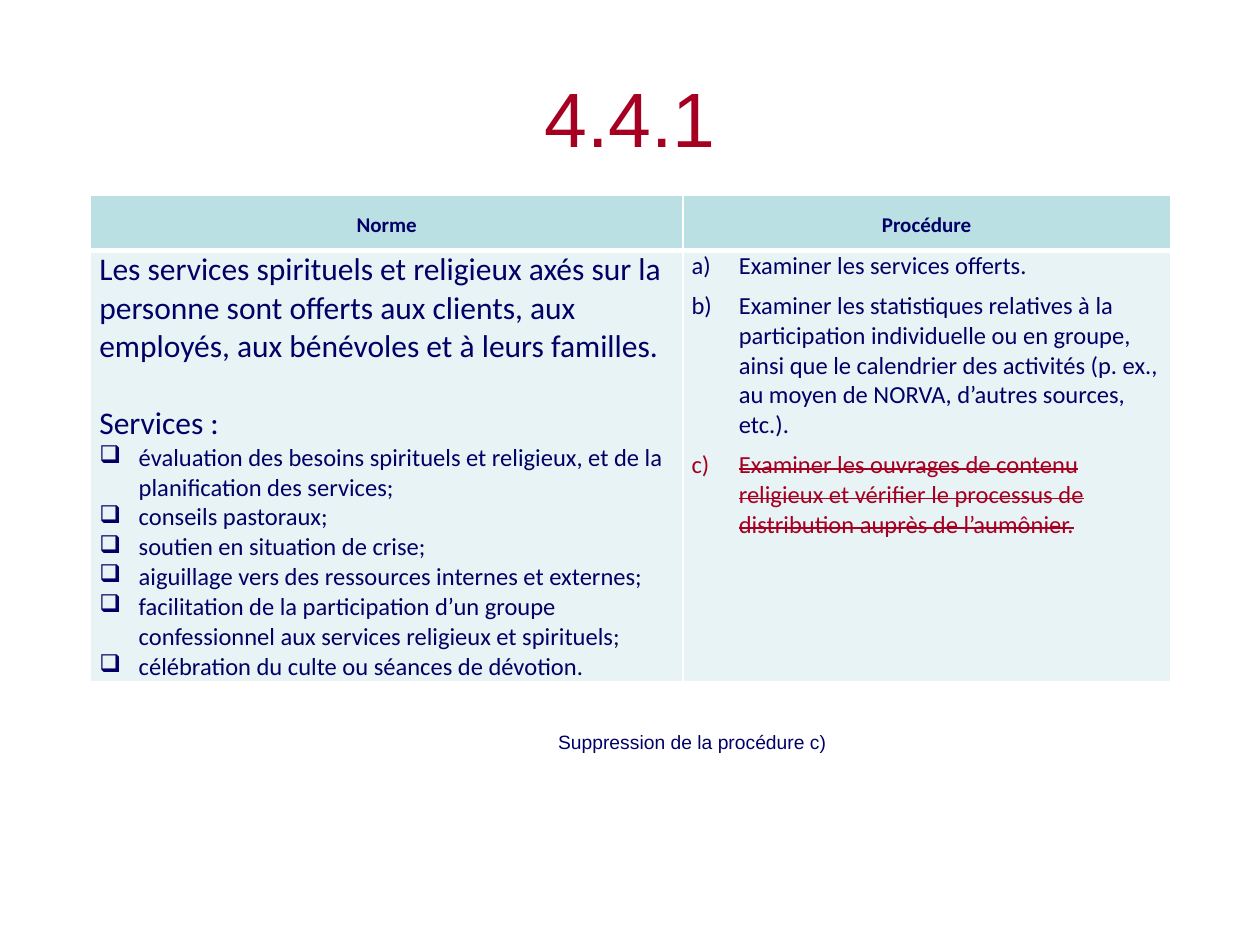
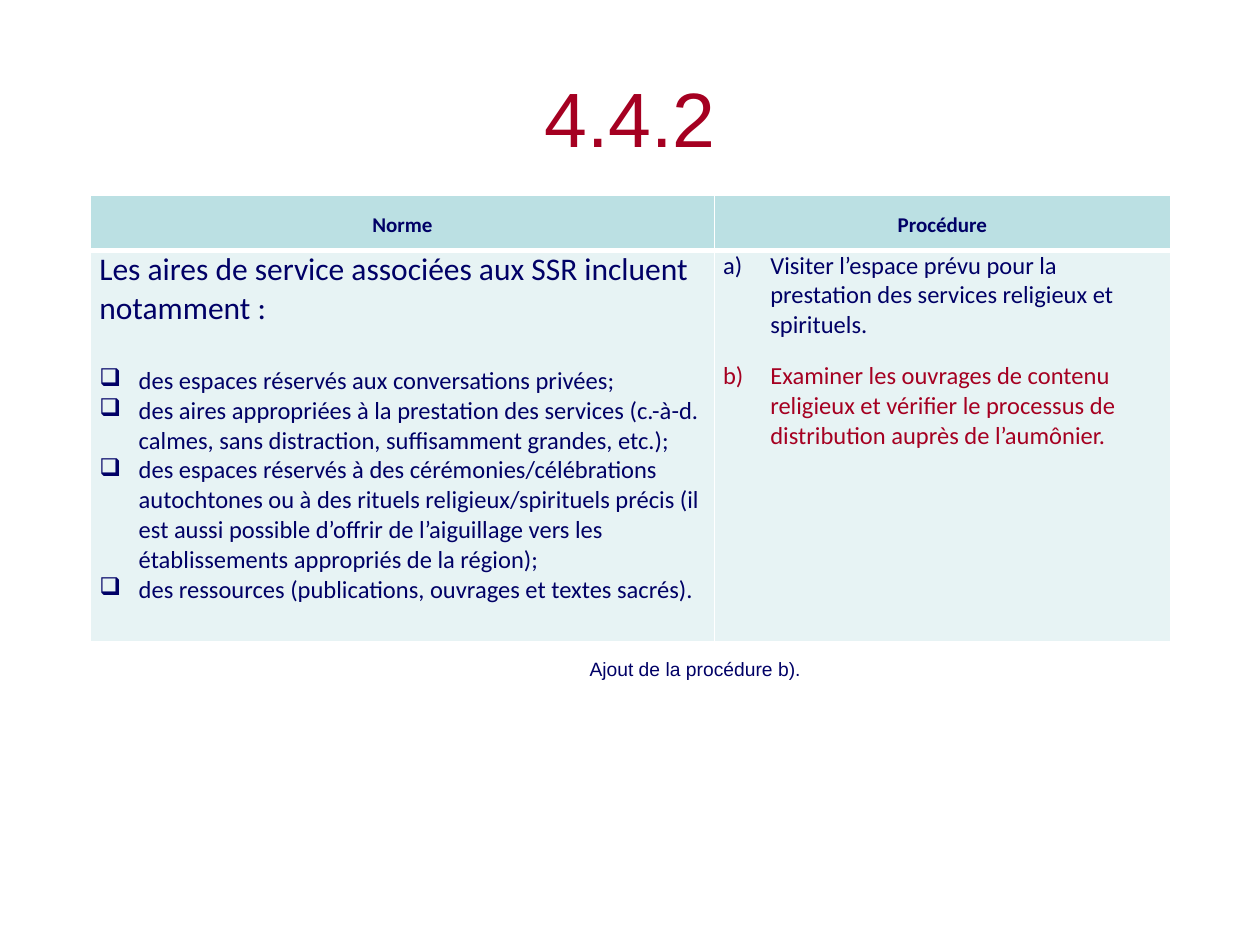
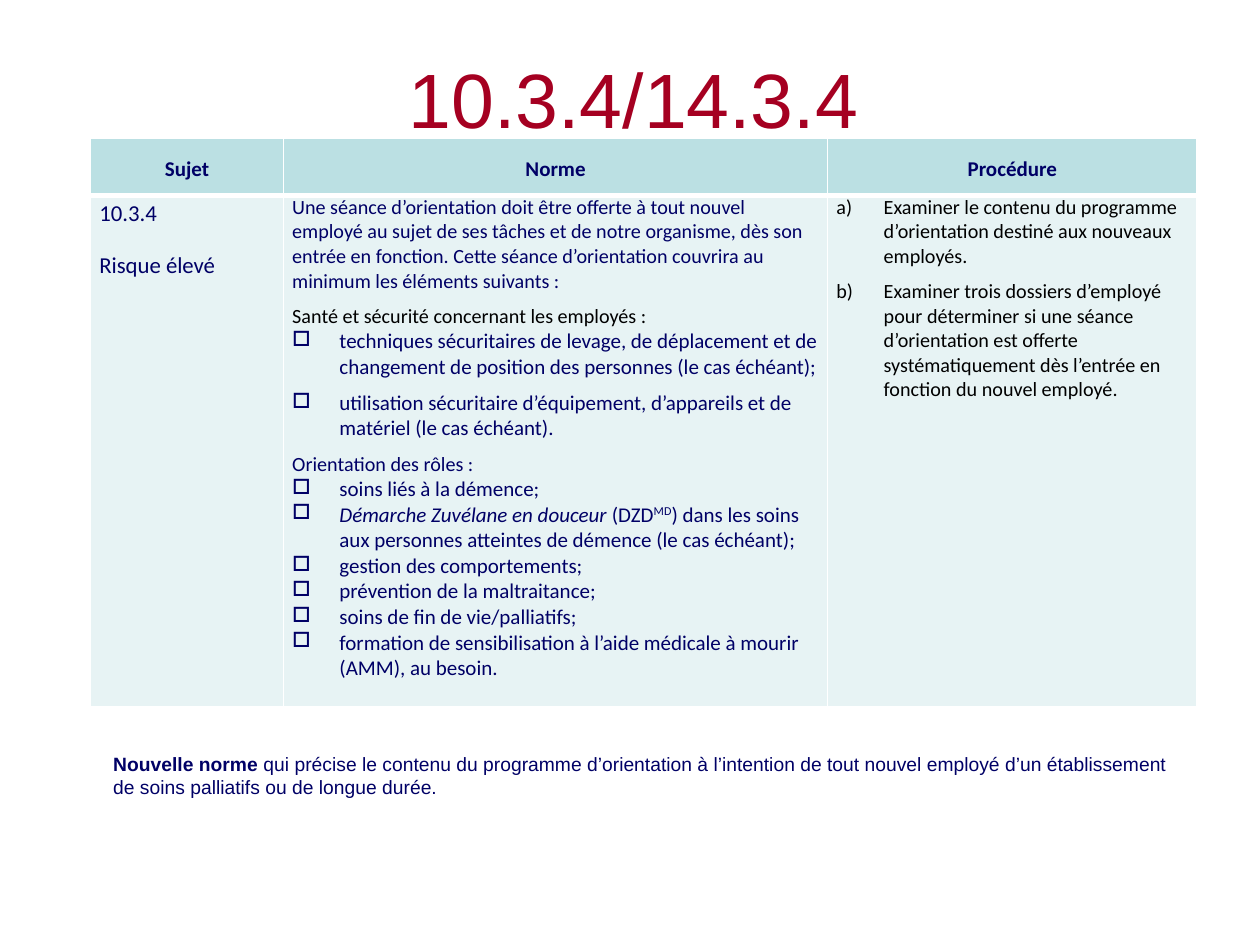
from dataclasses import dataclass

from lxml import etree
from pptx import Presentation
from pptx.dml.color import RGBColor
from pptx.enum.text import MSO_ANCHOR, PP_ALIGN
from pptx.oxml.ns import qn
from pptx.util import Pt

CENTER = PP_ALIGN.CENTER
MIDDLE = MSO_ANCHOR.MIDDLE
TITLE_ONLY = 5

COLORS = {
    "navy": "000066",
    "red": "A50021",
    "black": "000000",
    "white": "FFFFFF",
    "header": "BBE0E3",
    "body": "E7F3F4",
}
HEADING_FONT = "Arial"
TABLE_FONT = "Calibri"
TABLE_LEFT = 51.8
CELL_INSET = 5
BLANK_LINE = 22  # height of one 18 pt line
LETTERED = "a)"


@dataclass
class Para:
    """One paragraph: content is a string or a list of (text, style) parts."""
    content: object
    size: float = 14
    color: str = "navy"
    before: float = 0
    after: float = 0
    line: float = 1.0
    marker: str = ""
    indent: float = 0
    align: object = None
    bold: bool = False
    strike: bool = False
    font: str = TABLE_FONT


# Paragraph kinds
def header(text):
    return Para(text, size=12, bold=True, align=CENTER, line=1.15, after=12)


def check_items(texts, before_first=0):
    return [Para(text, marker="❑", indent=22.5, before=0 if i else before_first)
            for i, text in enumerate(texts)]


def box_item(content, after=0):
    return Para(content, size=12, marker="□", indent=27, after=after)


def step(text, **style):
    return Para(text, marker=LETTERED, indent=27, **style)


def caption(content):
    return Para(content, size=11, font=HEADING_FONT)


# Text formatting
def rgb(name):
    return RGBColor.from_string(COLORS[name])


def add_marker(paragraph, marker, indent):
    properties = paragraph._p.get_or_add_pPr()
    properties.set("marL", str(Pt(indent)))
    properties.set("indent", str(-Pt(indent)))
    if marker == LETTERED:
        bullet = etree.SubElement(properties, qn("a:buAutoNum"))
        bullet.set("type", "alphaLcParenR")
    else:
        bullet = etree.SubElement(properties, qn("a:buChar"))
        bullet.set("char", marker)


def write_paragraph(paragraph, para):
    if para.marker:
        add_marker(paragraph, para.marker, para.indent)
    if para.align is not None:
        paragraph.alignment = para.align
    paragraph.line_spacing = para.line
    paragraph.space_before = Pt(para.before)
    paragraph.space_after = Pt(para.after)

    parts = [(para.content, "")] if isinstance(para.content, str) else para.content
    for text, style in parts:
        run = paragraph.add_run()
        run.text = text
        run.font.name = para.font
        run.font.size = Pt(para.size)
        run.font.color.rgb = rgb(para.color)
        run.font.bold = para.bold or style == "bold"
        run.font.italic = style == "italic"
        if style == "superscript":
            run.font._element.set("baseline", "30000")
        if para.strike:
            run.font._element.set("strike", "sngStrike")


def write_paragraphs(frame, paras):
    for i, para in enumerate(paras):
        paragraph = frame.add_paragraph() if i else frame.paragraphs[0]
        write_paragraph(paragraph, para)


# Slide elements
def add_title(slide, text, left, top, width, height):
    title = slide.shapes.title
    title.left, title.top = Pt(left), Pt(top)
    title.width, title.height = Pt(width), Pt(height)
    frame = title.text_frame
    frame.vertical_anchor = MIDDLE
    write_paragraphs(frame, [Para(text, size=44, color="red", align=CENTER,
                                  font=HEADING_FONT)])


def add_caption(slide, content, left, top, width):
    box = slide.shapes.add_textbox(Pt(left), Pt(top), Pt(width), Pt(48))
    box.text_frame.word_wrap = True
    write_paragraphs(box.text_frame, [caption(content)])


def set_borders(cell, top, bottom):
    properties = cell._tc.get_or_add_tcPr()
    widths = {"a:lnL": 1, "a:lnR": 1, "a:lnT": top, "a:lnB": bottom}
    for position, (tag, width) in enumerate(widths.items()):
        line = etree.Element(qn(tag), w=str(Pt(width)))
        fill = etree.SubElement(line, qn("a:solidFill"))
        etree.SubElement(fill, qn("a:srgbClr"), val=COLORS["white"])
        properties.insert(position, line)


def fill_cell(cell, paras, is_header):
    cell.margin_left = cell.margin_right = Pt(CELL_INSET)
    cell.margin_top = cell.margin_bottom = 0
    if is_header:
        cell.vertical_anchor = MIDDLE
    cell.fill.solid()
    cell.fill.fore_color.rgb = rgb("header" if is_header else "body")
    set_borders(cell, *((1, 3) if is_header else (3, 1)))
    write_paragraphs(cell.text_frame, paras)


def add_standard_table(slide, top, widths, heights, columns):
    """columns maps each heading to the paragraphs below it."""
    table = slide.shapes.add_table(
        2, len(columns), Pt(TABLE_LEFT), Pt(top),
        Pt(sum(widths)), Pt(sum(heights))).table
    table.horz_banding = False
    for row, height in zip(table.rows, heights):
        row.height = Pt(height)
    for i, (heading, paras) in enumerate(columns.items()):
        table.columns[i].width = Pt(widths[i])
        fill_cell(table.cell(0, i), [header(heading)], True)
        fill_cell(table.cell(1, i), paras, False)


# Slides
def build_services(slide):
    add_title(slide, "4.4.1", 36, 21.6, 648, 90)
    norm = [
        Para("Les services spirituels et religieux axés sur la personne sont "
             "offerts aux clients, aux employés, aux bénévoles et à leurs familles.",
             size=18),
        Para("Services :", size=18, before=BLANK_LINE),
        *check_items([
            "évaluation des besoins spirituels et religieux, et de la "
            "planification des services;",
            "conseils pastoraux;",
            "soutien en situation de crise;",
            "aiguillage vers des ressources internes et externes;",
            "facilitation de la participation d’un groupe confessionnel aux "
            "services religieux et spirituels;",
            "célébration du culte ou séances de dévotion.",
        ]),
    ]
    procedure = [
        step("Examiner les services offerts.", after=6),
        step("Examiner les statistiques relatives à la participation individuelle "
             "ou en groupe, ainsi que le calendrier des activités (p. ex., au moyen "
             "de NORVA, d’autres sources, etc.).", after=6),
        step("Examiner les ouvrages de contenu religieux et vérifier le processus "
             "de distribution auprès de l’aumônier.",
             after=6, color="red", strike=True),
    ]
    add_standard_table(slide, 111.6, [338.4, 278.6], [31.7, 242.6],
                       {"Norme": norm, "Procédure": procedure})
    add_caption(slide, "Suppression de la procédure c)", 311.8, 414, 270)


def build_service_areas(slide):
    add_title(slide, "4.4.2", 36, 21.6, 648, 90)
    norm = [
        Para("Les aires de service associées aux SSR incluent notamment :", size=18),
        *check_items([
            "des espaces réservés aux conversations privées;",
            "des aires appropriées à la prestation des services (c.-à-d. calmes, "
            "sans distraction, suffisamment grandes, etc.);",
            "des espaces réservés à des cérémonies/célébrations autochtones ou à "
            "des rituels religieux/spirituels précis (il est aussi possible "
            "d’offrir de l’aiguillage vers les établissements appropriés de la "
            "région);",
            "des ressources (publications, ouvrages et textes sacrés).",
        ], before_first=BLANK_LINE),
    ]
    procedure = [
        step("Visiter l’espace prévu pour la prestation des services religieux et "
             "spirituels.", after=6),
        step("Examiner les ouvrages de contenu religieux et vérifier le processus "
             "de distribution auprès de l’aumônier.",
             before=6, after=6, color="red"),
    ]
    add_standard_table(slide, 111.6, [356.4, 260.6], [31.7, 223.7],
                       {"Norme": norm, "Procédure": procedure})
    add_caption(slide, "Ajout de la procédure b).", 329.8, 372.2, 222)


def build_orientation(slide):
    add_title(slide, "10.3.4/14.3.4", 38.2, 18, 648, 75.6)
    subject = [
        Para("10.3.4", size=13, line=1.15, after=6),
        Para("Risque élevé", size=13, line=1.15, before=6, after=6),
    ]
    norm = [
        Para("Une séance d’orientation doit être offerte à tout nouvel employé au "
             "sujet de ses tâches et de notre organisme, dès son entrée en "
             "fonction. Cette séance d’orientation couvrira au minimum les "
             "éléments suivants :", size=11.5, after=6),
        Para("Santé et sécurité concernant les employés :", size=11.5, color="black"),
        box_item("techniques sécuritaires de levage, de déplacement et de changement "
                 "de position des personnes (le cas échéant);", after=6),
        box_item("utilisation sécuritaire d’équipement, d’appareils et de matériel "
                 "(le cas échéant)."),
        Para("Orientation des rôles :", size=11.5, before=6),
        box_item("soins liés à la démence;"),
        box_item([
            ("Démarche Zuvélane en douceur", "italic"),
            (" (DZD", ""),
            ("MD", "superscript"),
            (") dans les soins aux personnes atteintes de démence (le cas échéant);",
             ""),
        ]),
        box_item("gestion des comportements;"),
        box_item("prévention de la maltraitance;"),
        box_item("soins de fin de vie/palliatifs;"),
        box_item("formation de sensibilisation à l’aide médicale à mourir (AMM), "
                 "au besoin."),
    ]
    procedure = [
        step("Examiner le contenu du programme d’orientation destiné aux nouveaux "
             "employés.", size=11.5, color="black"),
        step("Examiner trois dossiers d’employé pour déterminer si une séance "
             "d’orientation est offerte systématiquement dès l’entrée en fonction "
             "du nouvel employé.", size=11.5, color="black", before=6),
    ]
    add_standard_table(slide, 79.2, [110.2, 311, 211], [32.4, 292],
                       {"Sujet": subject, "Norme": norm, "Procédure": procedure})
    add_caption(slide, [
        ("Nouvelle norme", "bold"),
        (" qui précise le contenu du programme d’orientation à l’intention de tout "
         "nouvel employé d’un établissement de soins palliatifs ou de longue durée.",
         ""),
    ], 57.6, 426.2, 620.6)


def main():
    deck = Presentation()
    deck.slide_width, deck.slide_height = Pt(720), Pt(540)
    for build in (build_services, build_service_areas, build_orientation):
        build(deck.slides.add_slide(deck.slide_layouts[TITLE_ONLY]))
    deck.save("out.pptx")


if __name__ == "__main__":
    main()
